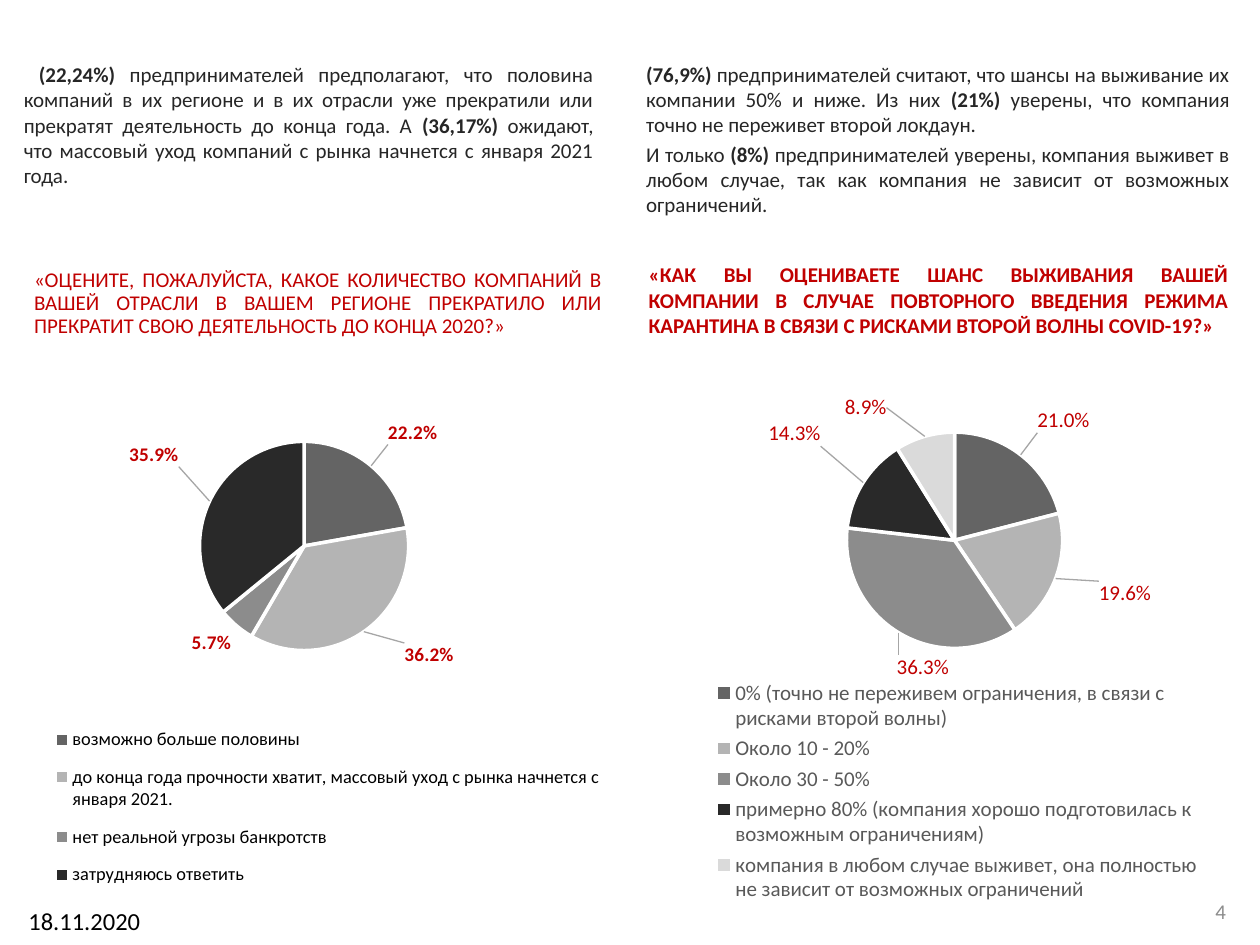
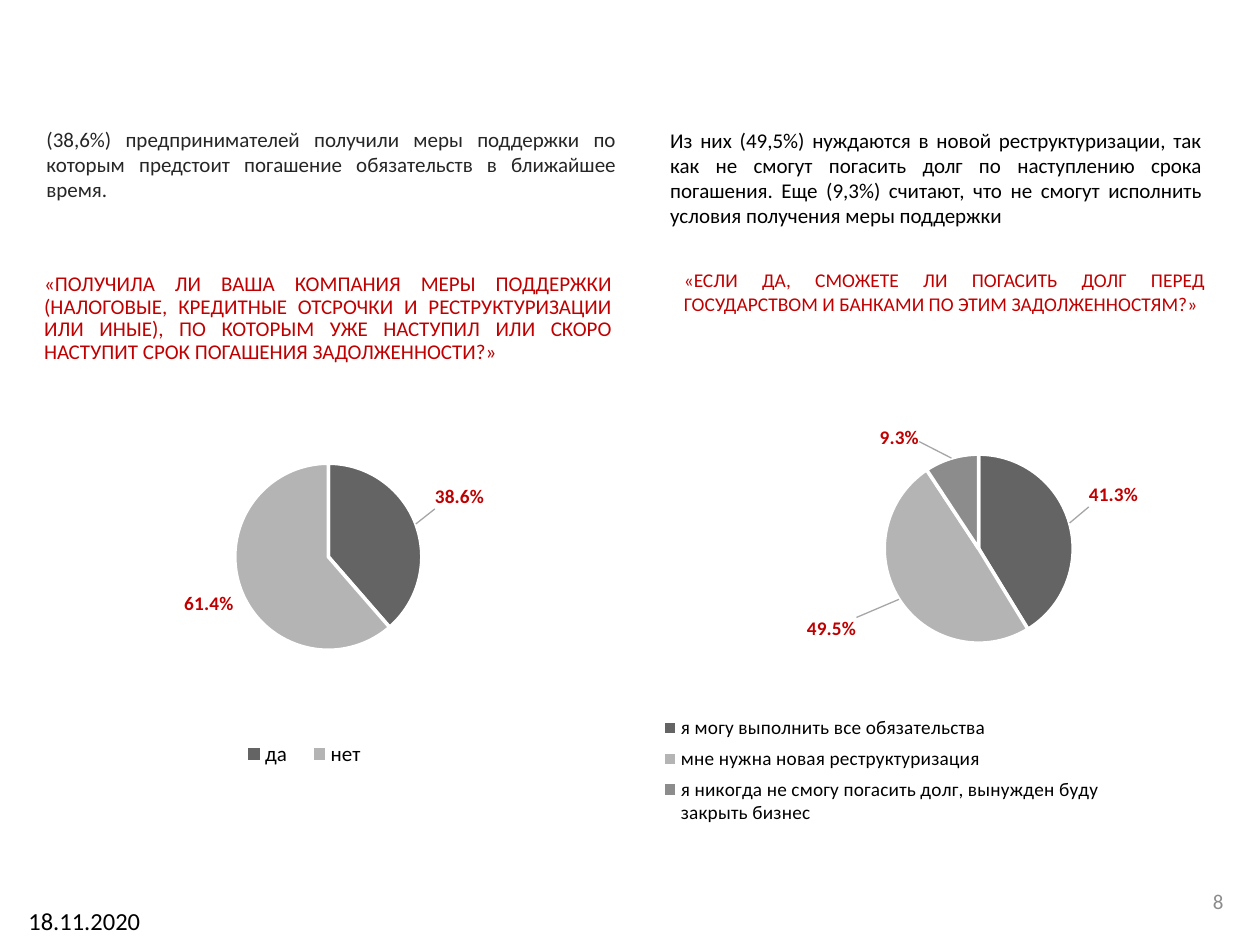
from dataclasses import dataclass

from lxml import etree
from pptx import Presentation
from pptx import util as u
from pptx.chart.data import CategoryChartData
from pptx.dml.color import RGBColor
from pptx.enum import chart as ch
from pptx.enum import text as t
from pptx.oxml import ns, parse_xml

COLUMNS, ROWS = 100, 75
SLIDE_WIDTH, SLIDE_HEIGHT = u.Inches(10), u.Inches(7.5)


@dataclass(frozen=True)
class Theme:
    font: str = "Calibri"
    ink: str = "000000"
    body: str = "262626"
    muted: str = "595959"
    accent: str = "C00000"
    page: str = "8C8C8C"
    leader: str = "A6A6A6"
    gap: str = "FFFFFF"
    slices: tuple = ("646464", "B4B4B4", "8C8C8C", "292929", "DADADA")
    text_size: float = 12
    small_question: float = 11.1
    label_size: float = 11
    small_legend: float = 10.5
    date_size: float = 14


THEME = Theme()


def area(left, top, width, height):
    column, row = SLIDE_WIDTH / COLUMNS, SLIDE_HEIGHT / ROWS
    return [u.Emu(round(n)) for n in
            (left * column, top * row, width * column, height * row)]


def style_font(font, size, color, bold=False):
    font.name = THEME.font
    font.size = u.Pt(size)
    font.bold = bold
    font.color.rgb = RGBColor.from_string(color)


def write(holder, content, size=THEME.text_size, color=THEME.body, bold=False,
          align=t.PP_ALIGN.JUSTIFY, anchor=t.MSO_ANCHOR.TOP,
          before=2.4, spacing=1.0, indent=0):
    frame = holder.text_frame
    frame.word_wrap = True
    frame.auto_size = t.MSO_AUTO_SIZE.NONE
    frame.vertical_anchor = anchor
    for number, line in enumerate(content.split("\n")):
        paragraph = frame.add_paragraph() if number else frame.paragraphs[0]
        paragraph.alignment = align
        paragraph.space_before = u.Pt(before)
        paragraph.line_spacing = spacing
        if indent:
            paragraph._p.get_or_add_pPr().set("indent", str(u.Inches(indent)))
        for part, words in enumerate(line.split("**")):
            if words:
                run = paragraph.add_run()
                run.text = words
                style_font(run.font, size, color, bold or part % 2 == 1)


def add_text(slide, place, content, **style):
    write(slide.shapes.add_textbox(*area(*place)), content, **style)


def add_finding(slide, place, content, **style):
    add_text(slide, place, content, anchor=t.MSO_ANCHOR.BOTTOM, **style)


def manual_layout(place, inner=False, offset=False):
    names = ("x", "y", "w", "h")
    target = '<c:layoutTarget val="inner"/>' if inner else ""
    modes = "" if offset else '<c:xMode val="edge"/><c:yMode val="edge"/>'
    values = "".join(f'<c:{name} val="{share}"/>'
                     for name, share in zip(names, place))
    return parse_xml(f'<c:layout {ns.nsdecls("c")}><c:manualLayout>{target}'
                     f'{modes}{values}</c:manualLayout></c:layout>')


def replace_layout(parent, layout, index):
    for old in parent.findall(ns.qn("c:layout")):
        parent.remove(old)
    parent.insert(index, layout)


def style_labels(series, shifts, bold):
    labels = series.data_labels
    labels.show_value = True
    labels.number_format = "0.0%"
    labels.number_format_is_linked = False
    labels.position = ch.XL_LABEL_POSITION.OUTSIDE_END
    style_font(labels.font, THEME.label_size if bold else THEME.text_size,
               THEME.accent, bold)
    for number, shift in shifts.items():
        label = series.points[number].data_label
        style_font(label.font, THEME.label_size if bold else THEME.text_size,
                   THEME.accent, bold)
        label.position = ch.XL_LABEL_POSITION.OUTSIDE_END
    group = series._element.find(ns.qn("c:dLbls"))
    for label, shift in zip(group.findall(ns.qn("c:dLbl")), shifts.values()):
        replace_layout(label, manual_layout(shift, offset=True), 1)
        label.insert(2, parse_xml(
            f'<c:numFmt {ns.nsdecls("c")} formatCode="0.0%" sourceLinked="0"/>'))
    for old in group.findall(ns.qn("c:showLeaderLines")):
        group.remove(old)
    etree.SubElement(group, ns.qn("c:showLeaderLines")).set("val", "1")
    group.append(parse_xml(
        f'<c:leaderLines {ns.nsdecls("c", "a")}><c:spPr><a:ln w="9525">'
        f'<a:solidFill><a:srgbClr val="{THEME.leader}"/></a:solidFill>'
        '</a:ln></c:spPr></c:leaderLines>'))


def add_pie(slide, place, answers, plot_place, legend_place, shifts,
            legend_size=THEME.text_size, legend_color=THEME.ink, bold=True):
    data = CategoryChartData(number_format="0.0%")
    data.categories = answers.keys()
    data.add_series("Series 1", answers.values())
    pie = slide.shapes.add_chart(ch.XL_CHART_TYPE.PIE, *area(*place), data).chart
    pie.has_title = False
    style_font(pie.font, 10, THEME.ink)
    pie.has_legend = True
    pie.legend.position = ch.XL_LEGEND_POSITION.BOTTOM
    pie.legend.include_in_layout = False
    style_font(pie.legend.font, legend_size, legend_color)
    replace_layout(pie.legend._element, manual_layout(legend_place), 1)
    plot_area = pie._chartSpace.chart.plotArea
    replace_layout(plot_area, manual_layout(plot_place, inner=True), 0)
    plot = pie.plots[0]
    plot.vary_by_categories = True
    series = plot.series[0]
    for number, color in zip(range(len(answers)), THEME.slices):
        portion = series.points[number].format
        portion.fill.solid()
        portion.fill.fore_color.rgb = RGBColor.from_string(color)
        portion.line.color.rgb = RGBColor.from_string(THEME.gap)
        portion.line.width = u.Pt(2)
    style_labels(series, shifts, bold)


def add_survey_slide(deck, question, question_place, page, page_place):
    slide = deck.slides.add_slide(deck.slide_layouts.get_by_name("Section Header"))
    title = slide.shapes.title
    title._element.getparent().remove(title._element)
    body = slide.placeholders[1]
    body.left, body.top, body.width, body.height = area(*question_place)
    write(body, question, color=THEME.accent, before=10, spacing=0.9)
    add_text(slide, page_place, page, color=THEME.page, before=0,
             align=t.PP_ALIGN.RIGHT, anchor=t.MSO_ANCHOR.MIDDLE)
    add_text(slide, (0, 71.4, 13.4, 3.6), "18.11.2020", size=THEME.date_size,
             color=THEME.ink, align=t.PP_ALIGN.CENTER)
    return slide


def build_survival(deck):
    slide = add_survey_slide(
        deck,
        "«ОЦЕНИТЕ, ПОЖАЛУЙСТА, КАКОЕ КОЛИЧЕСТВО КОМПАНИЙ В ВАШЕЙ ОТРАСЛИ "
        "В ВАШЕМ РЕГИОНЕ ПРЕКРАТИЛО ИЛИ ПРЕКРАТИТ СВОЮ ДЕЯТЕЛЬНОСТЬ "
        "ДО КОНЦА 2020?»",
        (1.7, 20.9, 47.1, 11), "4", (75, 70.3, 23.3, 4))
    add_finding(
        slide, (0.9, 5.1, 47.2, 10.3),
        "**(22,24%)** предпринимателей предполагают, что половина компаний "
        "в их регионе и в их отрасли уже прекратили или прекратят деятельность "
        "до конца года. А **(36,17%)** ожидают, что массовый уход компаний "
        "с рынка начнется с января 2021 года.", indent=0.12)
    add_finding(
        slide, (50.3, 5.8, 48.3, 11.9),
        "**(76,9%)** предпринимателей считают, что шансы на выживание их "
        "компании 50% и ниже. Из них **(21%)** уверены, что компания точно "
        "не переживет второй локдаун.\n"
        "И только **(8%)** предпринимателей уверены, компания выживет в любом "
        "случае, так как компания не зависит от возможных ограничений.")
    add_text(
        slide, (50.5, 20.3, 48, 12),
        "«КАК ВЫ ОЦЕНИВАЕТЕ ШАНС ВЫЖИВАНИЯ ВАШЕЙ КОМПАНИИ В СЛУЧАЕ ПОВТОРНОГО "
        "ВВЕДЕНИЯ РЕЖИМА КАРАНТИНА В СВЯЗИ С РИСКАМИ ВТОРОЙ ВОЛНЫ COVID-19?»",
        color=THEME.accent, bold=True)
    add_pie(
        slide, (2.3, 31.3, 48, 41.5),
        {"возможно больше половины": 0.222,
         "до конца года прочности хватит, массовый уход с рынка начнется "
         "с января 2021.": 0.362,
         "нет реальной угрозы банкротств": 0.057,
         "затрудняюсь ответить": 0.359},
        (0.09, 0.09, 0.73, 0.4), (0.02, 0.61, 0.95, 0.36),
        {0: (0.02, -0.03), 1: (0.06, 0.01), 3: (-0.04, -0.06)},
        legend_size=THEME.small_legend)
    add_pie(
        slide, (50.8, 31.3, 48, 42.9),
        {"0% (точно не переживем ограничения, в связи с рисками второй "
         "волны)": 0.21,
         "Около 10 - 20%": 0.196,
         "Около 30 - 50%": 0.363,
         "примерно 80% (компания хорошо подготовилась к возможным "
         "ограничениям)": 0.143,
         "компания в любом случае выживет, она полностью не зависит "
         "от возможных ограничений": 0.089},
        (0.16, 0.07, 0.72, 0.4), (0.11, 0.52, 0.83, 0.43),
        {0: (0.02, -0.03), 1: (0.06, 0), 2: (0.09, 0.03),
         3: (-0.06, -0.06), 4: (-0.06, -0.04)},
        legend_color=THEME.muted, bold=False)


def build_support(deck):
    slide = add_survey_slide(
        deck,
        "«ПОЛУЧИЛА ЛИ ВАША КОМПАНИЯ МЕРЫ ПОДДЕРЖКИ (НАЛОГОВЫЕ, КРЕДИТНЫЕ "
        "ОТСРОЧКИ И РЕСТРУКТУРИЗАЦИИ ИЛИ ИНЫЕ), ПО КОТОРЫМ УЖЕ НАСТУПИЛ ИЛИ "
        "СКОРО НАСТУПИТ СРОК ПОГАШЕНИЯ ЗАДОЛЖЕННОСТИ?»",
        (2.5, 21.2, 47.1, 11), "8", (74.8, 69.5, 23.3, 4))
    add_finding(
        slide, (2.7, 9.6, 47.2, 6.9),
        "(38,6%) предпринимателей получили меры поддержки по которым "
        "предстоит погашение обязательств в ближайшее время.")
    add_finding(
        slide, (52.2, 10, 44.2, 8.6),
        "Из них (49,5%) нуждаются в новой реструктуризации, так как не смогут "
        "погасить долг по наступлению срока погашения. Еще (9,3%) считают, "
        "что не смогут исполнить условия получения меры поддержки",
        color=THEME.ink)
    add_text(
        slide, (53.3, 20.8, 43.3, 5.8),
        "«ЕСЛИ ДА, СМОЖЕТЕ ЛИ ПОГАСИТЬ ДОЛГ ПЕРЕД ГОСУДАРСТВОМ И БАНКАМИ "
        "ПО ЭТИМ ЗАДОЛЖЕННОСТЯМ?»",
        size=THEME.small_question, color=THEME.accent)
    add_pie(
        slide, (2.3, 33.8, 48, 33), {"да": 0.386, "нет": 0.614},
        (0.09, 0.09, 0.81, 0.45), (0.33, 0.74, 0.25, 0.1),
        {0: (0.02, -0.03)})
    add_pie(
        slide, (50.8, 33.8, 48, 37.5),
        {"я могу выполнить все обязательства": 0.413,
         "мне нужна новая реструктуризация": 0.495,
         "я никогда не смогу погасить долг, вынужден буду закрыть "
         "бизнес": 0.093},
        (0.2, 0.06, 0.72, 0.4), (0.02, 0.6, 0.76, 0.26),
        {0: (0.02, -0.03), 1: (-0.06, 0.03), 2: (-0.05, -0.02)},
        legend_size=THEME.label_size)


def main():
    deck = Presentation()
    deck.slide_width, deck.slide_height = SLIDE_WIDTH, SLIDE_HEIGHT
    build_survival(deck)
    build_support(deck)
    deck.save("out.pptx")


if __name__ == "__main__":
    main()
